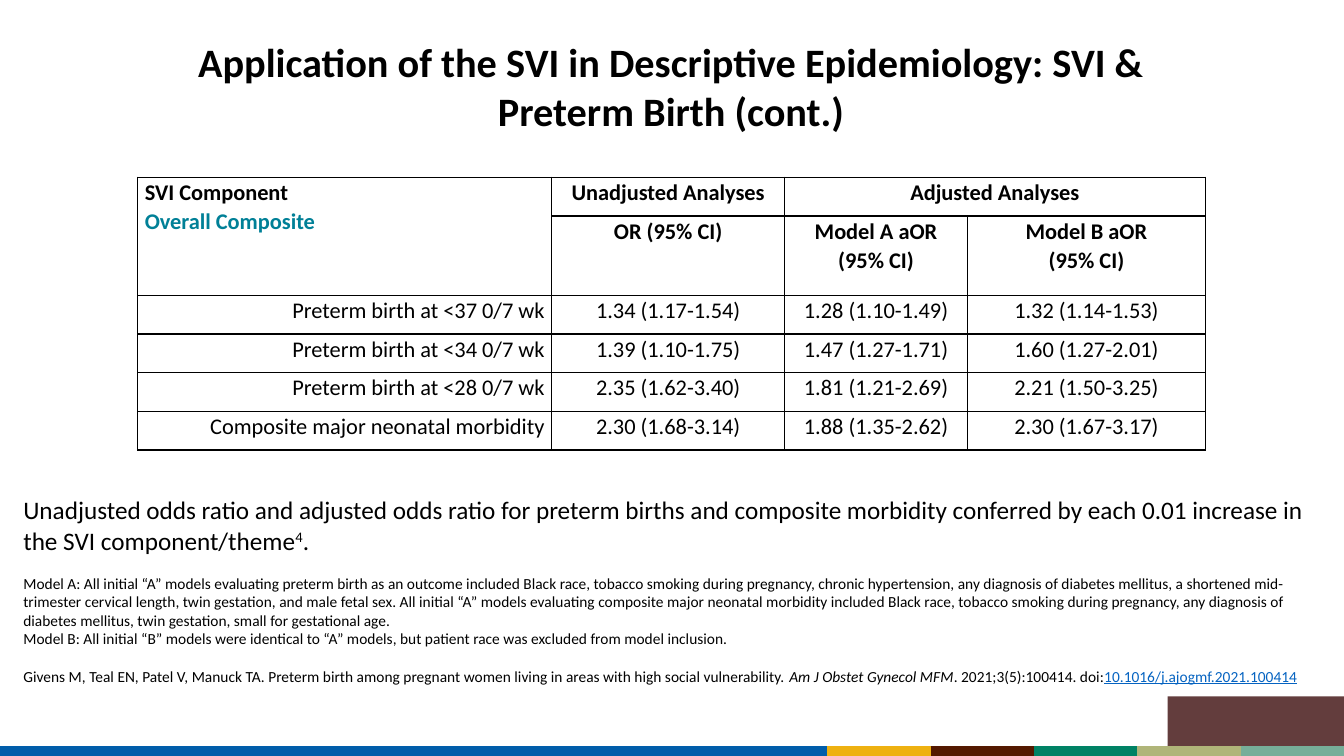
from dataclasses import dataclass

import pptx
import pptx.dml.color
import pptx.enum.shapes
import pptx.enum.text
import pptx.oxml
import pptx.oxml.ns
import pptx.util
from pptx.util import Length

COLORS = {
    "text": "000000", "overall": "008097", "doi": "0563C1", "corner": "633D3D",
    "blue": "005DAA", "gold": "EEB111", "brown": "541900",
    "green": "008265", "olive": "B0B579", "sage": "76AE99",
}
FONT = "Calibri"
ALIGN = pptx.enum.text.PP_ALIGN

# Slide grid: 160 columns by 90 rows
SLIDE_WIDTH, SLIDE_HEIGHT = pptx.util.Inches(13.33), pptx.util.Inches(7.5)
GRID_COLUMNS, GRID_ROWS = 160, 90


def across(columns: float) -> Length:
    return Length(round(SLIDE_WIDTH * columns / GRID_COLUMNS))


def down(rows: float) -> Length:
    return Length(round(SLIDE_HEIGHT * rows / GRID_ROWS))


@dataclass
class Area:
    left: float
    top: float
    width: float
    height: float

    def box(self) -> tuple[Length, Length, Length, Length]:
        return across(self.left), down(self.top), across(self.width), down(self.height)


@dataclass
class Band:
    color: str
    start: float
    end: float


@dataclass
class Span:
    text: str
    color: str = "text"
    italic: bool = False
    underline: bool = False
    superscript: bool = False


@dataclass
class Note:
    size: float
    spans: list[Span]
    space_before: float = 0


@dataclass
class Entry:
    row: int
    column: int
    lines: list[str]
    align: ALIGN = ALIGN.CENTER
    bold: bool = False


TITLE = "Application of the SVI in Descriptive Epidemiology: SVI & Preterm Birth (cont.)"
TITLE_AREA = Area(20.6, 3.7, 118.6, 13)
TABLE_AREA = Area(16.4, 21.1, 127.1, 32.5)
NOTES_AREA = Area(1.6, 58.3, 158.4, 29.9)
CORNER_AREA = Area(139, 82.9, 21.1, 5.9)

# Footer bands: a long blue one, then equal steps to the right edge
BAND_ROW, BLUE_END, BAND_STEP = 89.4, 98.5, 12.3
BANDS = [Band("blue", 0, BLUE_END)] + [
    Band(color, BLUE_END + i * BAND_STEP, BLUE_END + (i + 1) * BAND_STEP)
    for i, color in enumerate(["gold", "brown", "green", "olive", "sage"])
]

COLUMN_WIDTHS = [49.3, 27.7, 21.8, 28.3]
ROW_HEIGHTS = [4.61, 9.45, 4.61, 4.61, 4.61, 4.61]
HEADINGS = [
    Entry(0, 0, ["SVI Component", "Overall Composite"], ALIGN.LEFT, True),
    Entry(0, 1, ["Unadjusted Analyses"], bold=True),
    Entry(0, 2, ["Adjusted Analyses"], bold=True),
    Entry(1, 1, ["OR (95% CI)"], bold=True),
    Entry(1, 2, ["Model A aOR (95% CI)"], bold=True),
    Entry(1, 3, ["Model B aOR", "(95% CI)"], bold=True),
]
OUTCOMES = [
    ("Preterm birth at <37 0/7 wk", "1.34 (1.17-1.54)", "1.28 (1.10-1.49)", "1.32 (1.14-1.53)"),
    ("Preterm birth at <34 0/7 wk", "1.39 (1.10-1.75)", "1.47 (1.27-1.71)", "1.60 (1.27-2.01)"),
    ("Preterm birth at <28 0/7 wk", "2.35 (1.62-3.40)", "1.81 (1.21-2.69)", "2.21 (1.50-3.25)"),
    ("Composite major neonatal morbidity", "2.30 (1.68-3.14)", "1.88 (1.35-2.62)", "2.30 (1.67-3.17)"),
]

NOTES = [
    Note(18, [
        Span("Unadjusted odds ratio and adjusted odds ratio for preterm births and composite morbidity "
             "conferred by each 0.01 increase in the SVI component/theme"),
        Span("4", superscript=True),
        Span("."),
    ]),
    Note(11, [Span(
        "Model A: All initial “A” models evaluating preterm birth as an outcome included Black race, tobacco "
        "smoking during pregnancy, chronic hypertension, any diagnosis of diabetes mellitus, a shortened "
        "mid-trimester cervical length, twin gestation, and male fetal sex. All initial “A” models evaluating "
        "composite major neonatal morbidity included Black race, tobacco smoking during pregnancy, any "
        "diagnosis of diabetes mellitus, twin gestation, small for gestational age.")], 13.4),
    Note(11, [Span("Model B: All initial “B” models were identical to “A” models, but patient race was "
                   "excluded from model inclusion.")]),
    Note(11, [
        Span("Givens M, Teal EN, Patel V, Manuck TA. Preterm birth among pregnant women living in areas "
             "with high social vulnerability. "),
        Span("Am J Obstet Gynecol MFM", italic=True),
        Span(". 2021;3(5):100414. doi:"),
        Span("10.1016/j.ajogmf.2021.100414", "doi", underline=True),
    ], 13.4),
]


def rgb(name: str) -> pptx.dml.color.RGBColor:
    return pptx.dml.color.RGBColor.from_string(COLORS[name])


def set_font(font, size: float, bold: bool = False, color: str = "text") -> None:
    font.name, font.size, font.bold = FONT, pptx.util.Pt(size), bold
    font.color.rgb = rgb(color)


def draw_band(slide, band: Band) -> None:
    y = down(BAND_ROW)
    line = slide.shapes.add_connector(
        pptx.enum.shapes.MSO_CONNECTOR.STRAIGHT, across(band.start), y, across(band.end), y)
    line.line.color.rgb = rgb(band.color)
    line.line.width = pptx.util.Pt(7.5)
    line._element.spPr.append(pptx.oxml.parse_xml(f'<a:effectLst {pptx.oxml.ns.nsdecls("a")}/>'))


def draw_corner(slide) -> None:
    corner = slide.shapes.add_shape(pptx.enum.shapes.MSO_SHAPE.RECTANGLE, *CORNER_AREA.box())
    corner.shadow.inherit = False
    corner.fill.solid()
    corner.fill.fore_color.rgb = rgb("corner")
    corner.line.fill.background()


def draw_title(slide) -> None:
    title = slide.shapes.title
    title.left, title.top, title.width, title.height = TITLE_AREA.box()
    frame = title.text_frame
    frame.text = TITLE
    frame.auto_size = pptx.enum.text.MSO_AUTO_SIZE.NONE
    frame.vertical_anchor = pptx.enum.text.MSO_ANCHOR.MIDDLE
    frame.paragraphs[0].alignment = ALIGN.CENTER
    set_font(frame.paragraphs[0].font, 28.8, True)


def style_cell(cell) -> None:
    cell.margin_left = cell.margin_right = pptx.util.Inches(0.07)
    cell.margin_top = cell.margin_bottom = 0
    properties = cell._tc.get_or_add_tcPr()
    for side in "LRTB":
        properties.append(pptx.oxml.parse_xml(
            f'<a:ln{side} {pptx.oxml.ns.nsdecls("a")} w="{pptx.util.Pt(1)}"><a:solidFill>'
            f'<a:srgbClr val="{COLORS["text"]}"/></a:solidFill></a:ln{side}>'))
    cell.fill.background()


def fill_cell(cell, entry: Entry) -> None:
    cell.text_frame.text = "\n".join(entry.lines)
    for paragraph, line in zip(cell.text_frame.paragraphs, entry.lines):
        paragraph.alignment = entry.align
        paragraph.line_spacing = 1.07
        set_font(paragraph.font, 16, entry.bold, "overall" if line.startswith("Overall") else "text")


def draw_odds_ratios(slide) -> None:
    table = slide.shapes.add_table(len(ROW_HEIGHTS), len(COLUMN_WIDTHS), *TABLE_AREA.box()).table
    table.first_row = table.horz_banding = False
    for column, width in zip(table.columns, COLUMN_WIDTHS):
        column.width = across(width)
    for row, height in zip(table.rows, ROW_HEIGHTS):
        row.height = down(height)
    for cell in table.iter_cells():
        style_cell(cell)
    table.cell(0, 0).merge(table.cell(1, 0))
    table.cell(0, 2).merge(table.cell(0, 3))
    results = [
        Entry(r, c, [value], ALIGN.CENTER if c else ALIGN.RIGHT)
        for r, outcome in enumerate(OUTCOMES, start=2) for c, value in enumerate(outcome)
    ]
    for entry in HEADINGS + results:
        fill_cell(table.cell(entry.row, entry.column), entry)


def draw_notes(slide) -> None:
    frame = slide.shapes.add_textbox(*NOTES_AREA.box()).text_frame
    frame.word_wrap = True
    for i, note in enumerate(NOTES):
        paragraph = frame.add_paragraph() if i else frame.paragraphs[0]
        if note.space_before:
            paragraph.space_before = pptx.util.Pt(note.space_before)
        for span in note.spans:
            run = paragraph.add_run()
            run.text = span.text
            set_font(run.font, note.size, color=span.color)
            run.font.italic, run.font.underline = span.italic, span.underline
            if span.superscript:
                run._r.get_or_add_rPr().set("baseline", "30000")


def main() -> None:
    deck = pptx.Presentation()
    deck.slide_width, deck.slide_height = SLIDE_WIDTH, SLIDE_HEIGHT
    slide = deck.slides.add_slide(deck.slide_layouts.get_by_name("Title Only"))
    for band in BANDS:
        draw_band(slide, band)
    draw_corner(slide)
    draw_title(slide)
    draw_odds_ratios(slide)
    draw_notes(slide)
    deck.save("out.pptx")


if __name__ == "__main__":
    main()
